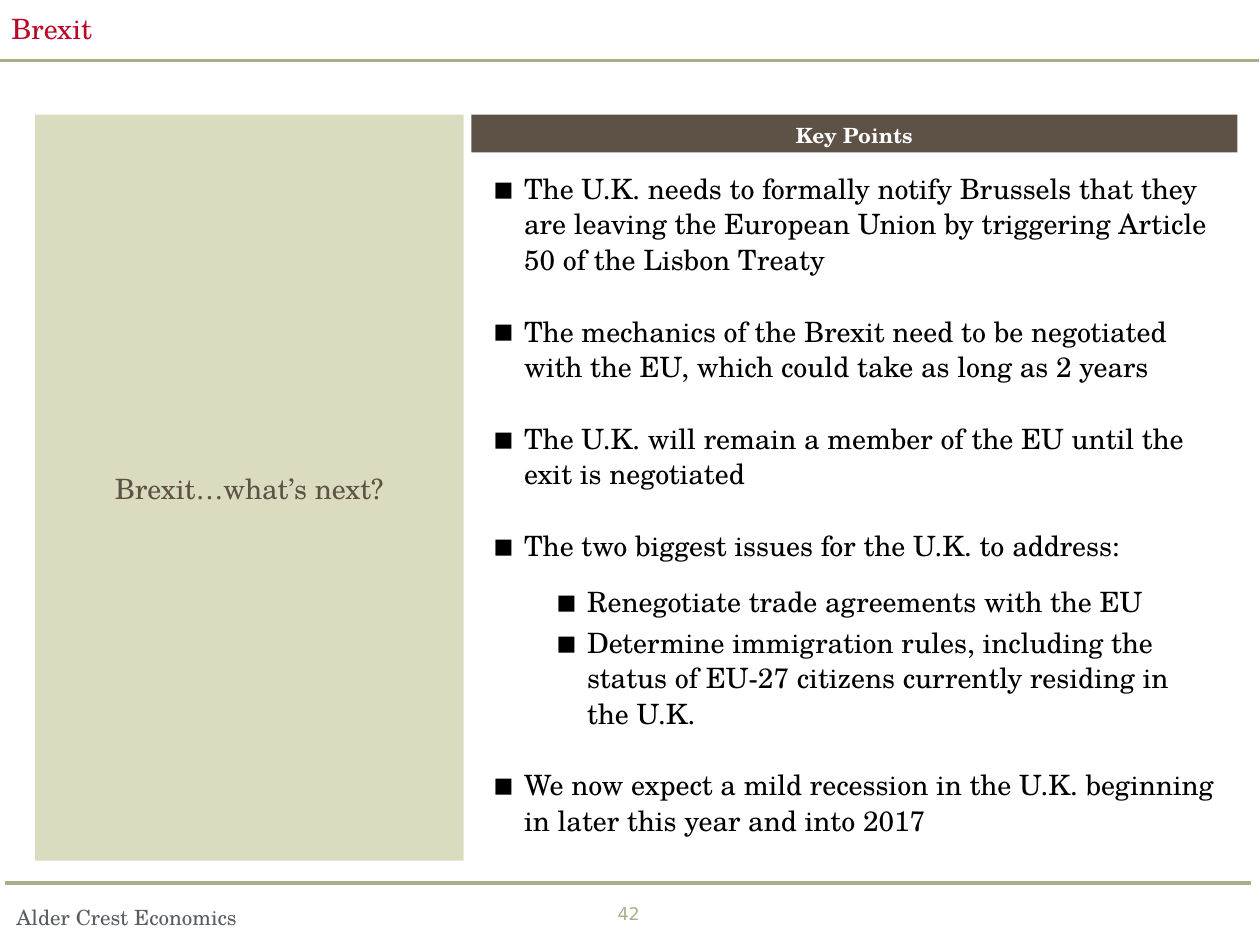
from lxml import etree
from pptx import Presentation
from pptx.dml.color import RGBColor
from pptx.enum.shapes import MSO_CONNECTOR, MSO_SHAPE
from pptx.enum.text import MSO_ANCHOR, MSO_AUTO_SIZE, PP_ALIGN
from pptx.oxml.ns import qn
from pptx.util import Inches, Pt

LEFT, CENTER = PP_ALIGN.LEFT, PP_ALIGN.CENTER
TOP, MIDDLE = MSO_ANCHOR.TOP, MSO_ANCHOR.MIDDLE
NO_FIT = MSO_AUTO_SIZE.NONE
RECTANGLE = MSO_SHAPE.RECTANGLE
STRAIGHT = MSO_CONNECTOR.STRAIGHT

COLUMNS, ROWS = 100, 75
SERIF, SANS = "TeX Gyre Schola", "DejaVu Sans"
RED, SAGE, PALE, BROWN = "BB0826", "A9B089", "DADBBF", "5E5145"
GREY, BLACK, WHITE = "5A5D62", "000000", "FFFFFF"

POINTS = [
    (0, 0, "The U.K. needs to formally notify Brussels that they are leaving the European Union "
           "by triggering Article 50 of the Lisbon Treaty"),
    (0, 21, "The mechanics of the Brexit need to be negotiated with the EU, "
            "which could take as long as 2 years"),
    (0, 21, "The U.K. will remain a member of the EU until the exit is negotiated"),
    (0, 21, "The two biggest issues for the U.K. to address:"),
    (1, 12, "Renegotiate trade agreements with the EU"),
    (1, 3.2, "Determine immigration rules, including the status of EU-27 citizens "
             "currently residing in the U.K."),
    (0, 21, "We now expect a mild recession in the U.K. beginning in later this year and into 2017"),
]


def color(value):
    return RGBColor.from_string(value)


class SlideBuilder:
    def __init__(self, deck):
        self.column = deck.slide_width / COLUMNS
        self.row = deck.slide_height / ROWS
        self.page = deck.slides.add_slide(deck.slide_layouts[1])

    def area(self, left, top, width, height):
        return (round(left * self.column), round(top * self.row),
                round(width * self.column), round(height * self.row))

    def place(self, shape, area):
        shape.left, shape.top, shape.width, shape.height = self.area(*area)

    def frame(self, shape, anchor=TOP, inset=(0.1, 0.05)):
        frame = shape.text_frame
        frame.word_wrap = True
        frame.auto_size = NO_FIT
        frame.vertical_anchor = anchor
        frame.margin_left = frame.margin_right = Inches(inset[0])
        frame.margin_top = frame.margin_bottom = Inches(inset[1])
        return frame

    def style(self, para, size, ink, align=LEFT, spacing=1.0, font=SERIF, bold=False):
        para.alignment = align
        para.line_spacing = spacing
        para.space_before = Pt(0)
        for span in para.runs:
            span.font.name = font
            span.font.size = Pt(size)
            span.font.bold = bold
            span.font.color.rgb = color(ink)

    def rule(self, left, right, row):
        x, y, width, _ = self.area(left, row, right - left, 0)
        line = self.page.shapes.add_connector(STRAIGHT, x, y, x + width, y)
        line.line.color.rgb = color(SAGE)
        line.line.width = Pt(2)
        etree.SubElement(line._element.spPr, qn("a:effectLst"))

    def title(self, area, text):
        box = self.page.shapes.title
        self.place(box, area)
        frame = self.frame(box)
        frame.text = text
        self.style(frame.paragraphs[0], 16, RED)

    def label(self, area, text, size, ink, **look):
        box = self.page.shapes.add_textbox(*self.area(*area))
        frame = self.frame(box, inset=(0.11, 0.06))
        frame.text = text
        self.style(frame.paragraphs[0], size, ink, **look)

    def panel(self, area, text, size, fill, ink, anchor=TOP, bold=False):
        box = self.page.shapes.add_shape(RECTANGLE, *self.area(*area))
        box.shadow.inherit = False
        box.fill.solid()
        box.fill.fore_color.rgb = color(fill)
        box.line.fill.background()
        frame = self.frame(box, anchor)
        frame.text = text
        self.style(frame.paragraphs[0], size, ink, CENTER, 1.05, bold=bold)

    def bullet(self, para):
        properties = para._p.get_or_add_pPr()
        properties.set("marL", str(Inches(0.25 + 0.5 * para.level)))
        properties.set("indent", str(-Inches(0.25)))
        tint = etree.SubElement(properties, qn("a:buClr"))
        etree.SubElement(tint, qn("a:srgbClr"), val=BLACK)
        etree.SubElement(properties, qn("a:buSzPct"), val="115000")
        etree.SubElement(properties, qn("a:buFont"), typeface=SANS)
        etree.SubElement(properties, qn("a:buChar"), char="▪")

    def bullets(self, area, points):
        box = self.page.placeholders[1]
        self.place(box, area)
        frame = self.frame(box)
        frame.text = "\n".join(text for _, _, text in points)
        for para, (level, gap, _) in zip(frame.paragraphs, points):
            para.level = level
            self.bullet(para)
            self.style(para, 16, BLACK, spacing=1.05)
            para.space_before = Pt(gap)


def main():
    deck = Presentation()
    deck.slide_width, deck.slide_height = Inches(10), Inches(7.5)
    slide = SlideBuilder(deck)
    slide.rule(0.4, 99.3, 70.1)
    slide.rule(-0.1, 99.9, 4.8)
    slide.title((-0.1, 0.4, 94.1, 3.9), "Brexit")
    slide.panel((2.8, 9.1, 34, 59.2), "Brexit…what’s next?", 16, PALE, BROWN, MIDDLE)
    slide.panel((37.4, 9.1, 60.8, 3), "Key Points", 12, BROWN, WHITE, bold=True)
    slide.bullets((38.1, 13, 59.4, 55.3), POINTS)
    slide.label((0.2, 71.2, 43.8, 3.1), "Alder Crest Economics", 12, GREY)
    slide.label((45, 71, 9.8, 3.6), "42", 10, SAGE, align=CENTER, spacing=1.05, font=SANS)
    deck.save("out.pptx")


if __name__ == "__main__":
    main()
